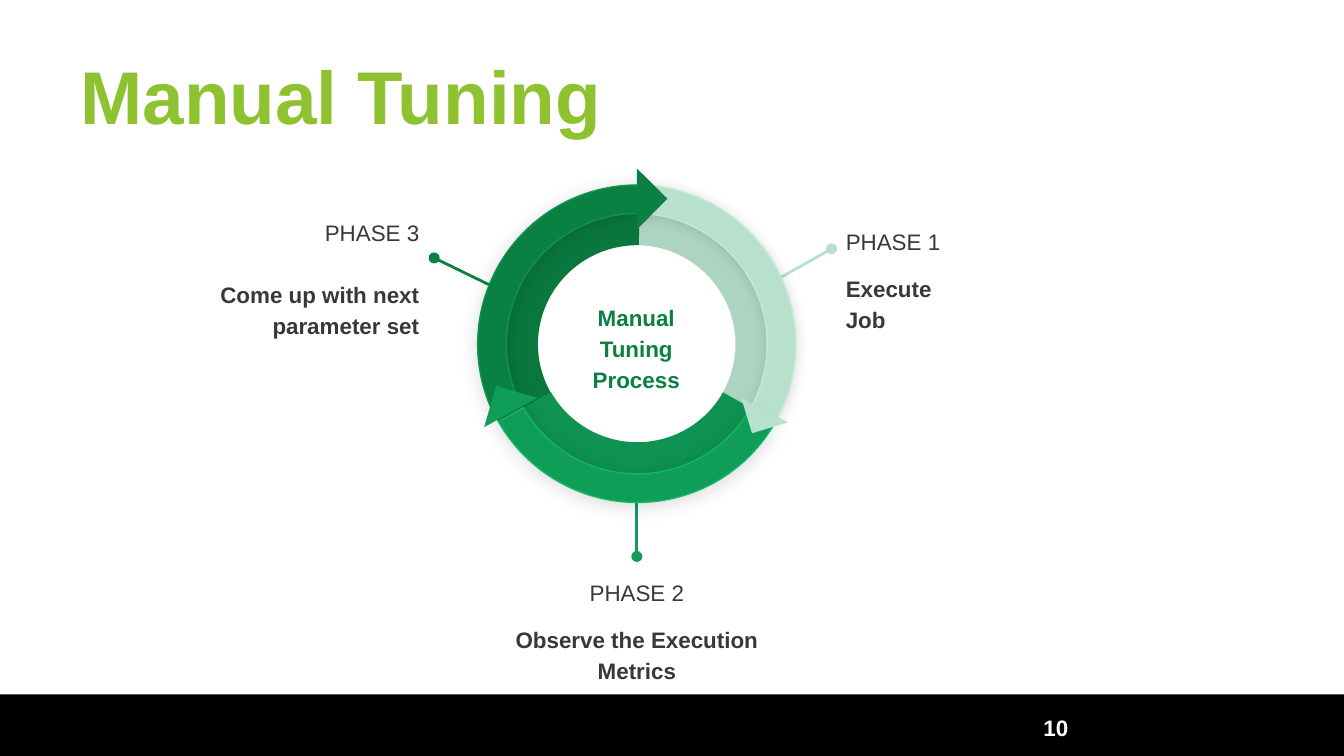
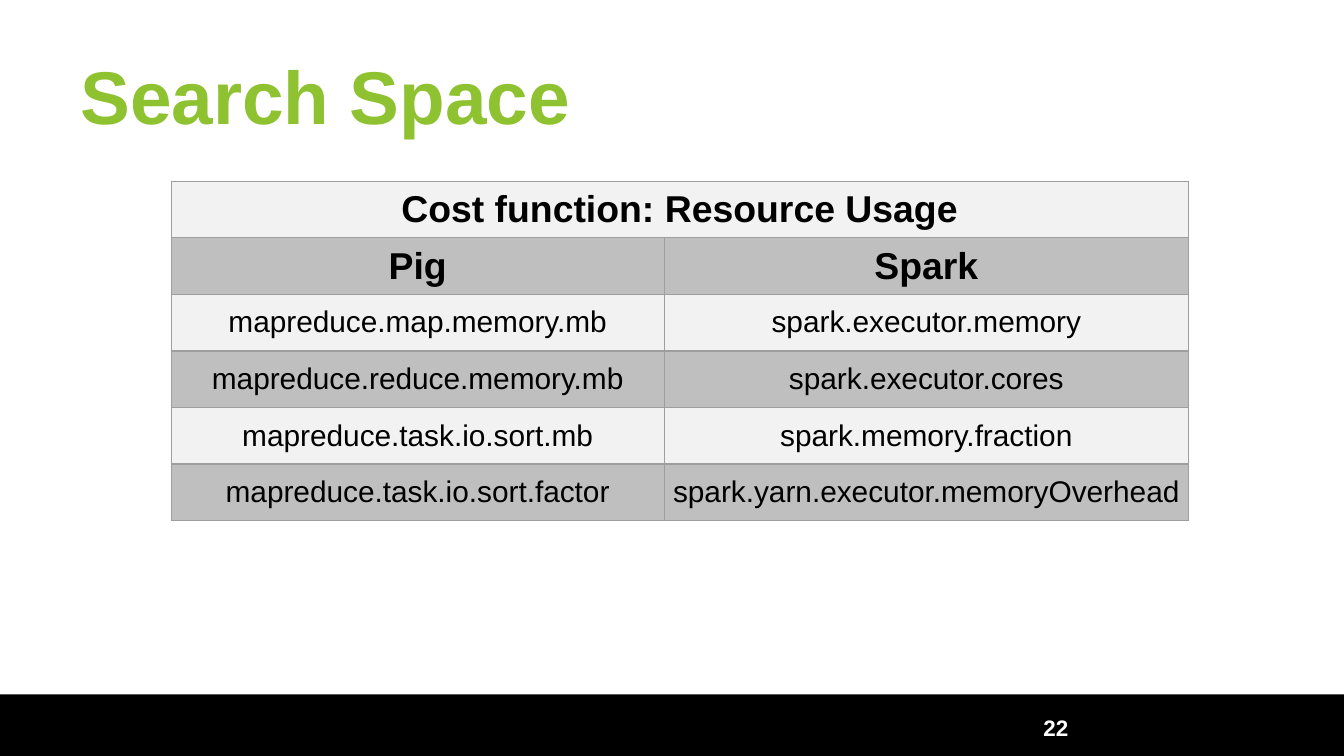
from lxml.etree import SubElement
from pptx import Presentation
from pptx.dml.color import RGBColor
from pptx.enum.shapes import MSO_CONNECTOR, MSO_SHAPE
from pptx.enum.text import MSO_ANCHOR, PP_ALIGN
from pptx.oxml import parse_xml
from pptx.oxml.ns import nsdecls, qn
from pptx.util import Pt

FONT = "Arial"
COLORS = {
    "title": "8FC230", "band": "000000", "white": "FFFFFF", "text": "383838",
    "light": "B7E1CD", "light inner": "ACD4C1", "light edge": "BFEBD6",
    "mid": "0F9D58", "mid inner": "0E9352", "mid edge": "11B666",
    "dark": "0B8043", "dark inner": "0A783E", "dark edge": "0E9352",
    "row light": "F2F2F2", "row dark": "BFBFBF", "border": "9E9E9E",
}
COLORS = {name: RGBColor.from_string(value) for name, value in COLORS.items()}


def add_text(shapes, box, lines, size, color, align=PP_ALIGN.LEFT, bold=True,
             anchor=MSO_ANCHOR.MIDDLE, spacing=None, inset=7.2):
    """Add a wrapped text box with one paragraph for each line."""
    shape = shapes.add_textbox(*[Pt(value) for value in box])
    frame = shape.text_frame
    frame.word_wrap = True
    frame.vertical_anchor = anchor
    frame.margin_left = frame.margin_right = Pt(7.2)
    frame.margin_top = frame.margin_bottom = Pt(inset)
    frame.text = "\n".join(lines)
    for paragraph in frame.paragraphs:
        paragraph.alignment = align
        paragraph.line_spacing = spacing
        font = paragraph.runs[0].font
        font.name, font.size, font.bold = FONT, Pt(size), bold
        font.color.rgb = COLORS[color]
    return frame


def add_filled(slide, preset, box, color, rotation=0):
    """Add a plain filled preset shape without line or shadow."""
    shape = slide.shapes.add_shape(preset, *[Pt(value) for value in box])
    shape.shadow.inherit = False
    shape.fill.solid()
    shape.fill.fore_color.rgb = COLORS[color]
    shape.line.fill.background()
    shape.rotation = rotation
    return shape


presentation = Presentation()
presentation.slide_width, presentation.slide_height = Pt(720), Pt(405)

# Shared parts: band, title, page number
slides = []
for title, number in (("Manual Tuning", "10"), ("Search Space", "22")):
    slide = presentation.slides.add_slide(presentation.slide_layouts[6])
    add_filled(slide, MSO_SHAPE.RECTANGLE, (0, 372, 720, 33.8), "band")
    add_text(slide.shapes, (36, 16.6, 648, 67.7), [title], 40, "title")
    add_text(slide.shapes, (545.8, 377.3, 39.6, 25.2), [number], 12, "white",
             PP_ALIGN.CENTER, inset=3.6)
    slides.append(slide)
cycle_slide, table_slide = slides

# Phases: label and leader line with a dot at its outer end
phases = [
    (["PHASE 3", "Come up with next parameter set"], (104.4, 108, 127.4, 41.8),
     PP_ALIGN.RIGHT, 16.5, (232.6, 138.2, 265, 154), "dark"),
    (["PHASE 1", "Execute", "Job"], (446, 113, 95, 41.8),
     PP_ALIGN.LEFT, 8.5, (445.5, 133.3, 417.6, 149), "light"),
    (["PHASE 2", "Observe the Execution Metrics"], (257, 301, 168.5, 41.8),
     PP_ALIGN.CENTER, 8.5, (341.2, 298.1, 341.2, 269.3), "mid"),
]
for lines, box, align, gap, ends, color in phases:
    group = cycle_slide.shapes.add_group_shape()
    leader = group.shapes.add_connector(
        MSO_CONNECTOR.STRAIGHT, *[Pt(value) for value in ends])
    leader.line.color.rgb = COLORS[color]
    leader.line.width = Pt(1.5)
    SubElement(leader.line._get_or_add_ln(), qn("a:headEnd"), type="oval")
    SubElement(leader._element.spPr, qn("a:effectLst"))
    frame = add_text(group.shapes, box, lines, 12, "text", align,
                     anchor=MSO_ANCHOR.TOP, spacing=1.15)
    frame.paragraphs[0].runs[0].font.bold = False
    frame.paragraphs[1].space_before = Pt(gap)

add_text(cycle_slide.shapes, (295.2, 160.6, 91.4, 50.4), ["Manual Tuning Process"],
         12, "dark", PP_ALIGN.CENTER, spacing=1.15)

# Ring: each phase has a wide inner arc and a thin outer arc on top
placements = {"light": (29.7, False), "dark": (330.3, True), "mid": (209.7, True)}
arcs = [("light", "inner"), ("light", "outer"), ("dark", "inner"),
        ("mid", "inner"), ("dark", "outer"), ("mid", "outer")]
for phase, part in arcs:
    rotation, flipped = placements[phase]
    color = phase if part == "outer" else phase + " inner"
    arc = add_filled(cycle_slide, MSO_SHAPE.BLOCK_ARC, (255.8, 99.2, 170.6, 169.9),
                     color, rotation)
    if flipped:
        arc._element.spPr.xfrm.set("flipH", "1")
    arc.adjustments[0] = 144.14 if phase == "light" else 143.45
    arc.adjustments[1] = 0.2 if part == "inner" else 215
    arc.adjustments[2] = 0.19 if part == "inner" else 0.09
    if part == "outer":
        arc.line.color.rgb = COLORS[phase + " edge"]
        arc.line.width = Pt(0.75)
        blur, distance = (6.8, 0.8) if phase == "light" else (11.2, 1.5)
        effects = arc._element.spPr.find(qn("a:effectLst"))
        effects.append(parse_xml(
            f'<a:outerShdw {nsdecls("a")} blurRad="{Pt(blur)}" dist="{Pt(distance)}" '
            'dir="5400000" algn="bl" rotWithShape="0"><a:srgbClr val="000000">'
            '<a:alpha val="15000"/></a:srgbClr></a:outerShdw>'))

# Arrowheads of the ring
for box, rotation, color in (
    ((262.1, 209.5, 23, 23), 106.2, "mid"),
    ((399.6, 210.2, 20.2, 19.4), 343.1, "light"),
    ((329.8, 95, 23, 23), 224.7, "dark"),
):
    add_filled(cycle_slide, MSO_SHAPE.RIGHT_TRIANGLE, box, color, rotation)

# Search space table
rows = [
    ("Cost function: Resource Usage", ""),
    ("Pig", "Spark"),
    ("mapreduce.map.memory.mb", "spark.executor.memory"),
    ("mapreduce.reduce.memory.mb", "spark.executor.cores"),
    ("mapreduce.task.io.sort.mb", "spark.memory.fraction"),
    ("mapreduce.task.io.sort.factor", "spark.yarn.executor.memoryOverhead"),
]
table = table_slide.shapes.add_table(
    len(rows), 2, Pt(91.7), Pt(97.1), Pt(545), Pt(182)).table
table.first_row = table.horz_banding = False
table.columns[0].width, table.columns[1].width = Pt(264.2), Pt(280.8)
for row_index, texts in enumerate(rows):
    table.rows[row_index].height = Pt(30.33)
    for column_index, text in enumerate(texts):
        cell = table.cell(row_index, column_index)
        cell.margin_left = cell.margin_right = cell.margin_top = cell.margin_bottom = 0
        cell.vertical_anchor = MSO_ANCHOR.MIDDLE
        for side in ("a:lnL", "a:lnR", "a:lnT", "a:lnB"):
            border = SubElement(cell._tc.get_or_add_tcPr(), qn(side), w=str(Pt(0.75)))
            fill = SubElement(border, qn("a:solidFill"))
            SubElement(fill, qn("a:srgbClr"), val=str(COLORS["border"]))
        cell.fill.solid()
        cell.fill.fore_color.rgb = COLORS["row dark" if row_index % 2 else "row light"]
        cell.text_frame.text = text
        paragraph = cell.text_frame.paragraphs[0]
        paragraph.alignment = PP_ALIGN.CENTER
        for run in paragraph.runs:
            run.font.name = FONT
            run.font.size = Pt(20 if row_index < 2 else 16)
            run.font.bold = row_index < 2
            run.font.color.rgb = COLORS["band"]
table.cell(0, 0).merge(table.cell(0, 1))

presentation.save("out.pptx")
